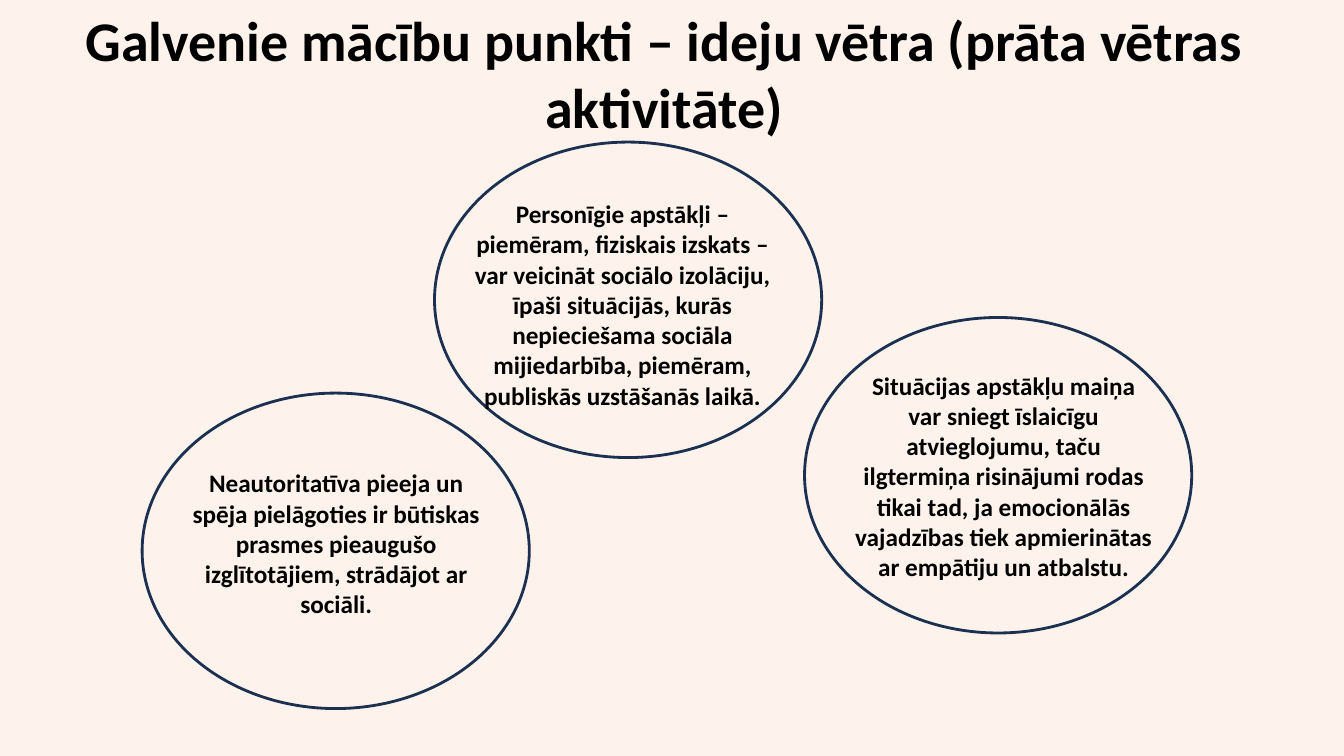
from dataclasses import dataclass

from pptx import Presentation
from pptx.dml.color import RGBColor
from pptx.enum.shapes import MSO_SHAPE
from pptx.enum.text import MSO_ANCHOR, MSO_AUTO_SIZE, PP_ALIGN
from pptx.util import Inches, Pt


@dataclass(frozen=True)
class Theme:
    font: str = "Calibri"
    background: RGBColor = RGBColor(0xFD, 0xF3, 0xEC)
    outline: RGBColor = RGBColor(0x1C, 0x30, 0x52)
    text: RGBColor = RGBColor(0, 0, 0)
    title_size: Pt = Pt(40)
    idea_size: Pt = Pt(18)
    outline_width: Pt = Pt(2)


THEME = Theme()
BUBBLE_WIDTH, BUBBLE_HEIGHT = 3.84, 3.13
TEXT_WIDTH = 3.17

TITLE = "Galvenie mācību punkti – ideju vētra (prāta vētras aktivitāte)"

# Bubble left and top, text offset within the bubble, text height, text
IDEAS = [
    (4.31, 1.41, 0.28, 0.51, 2.22,
     "Personīgie apstākļi – piemēram, fiziskais izskats – var veicināt "
     "sociālo izolāciju, īpaši situācijās, kurās nepieciešama sociāla "
     "mijiedarbība, piemēram, publiskās uzstāšanās laikā."),
    (1.41, 3.9, 0.34, 0.69, 1.62,
     "Neautoritatīva pieeja un spēja pielāgoties ir būtiskas prasmes "
     "pieaugušo izglītotājiem, strādājot ar sociāli."),
    (7.98, 3.15, 0.39, 0.47, 2.22,
     "Situācijas apstākļu maiņa var sniegt īslaicīgu atvieglojumu, taču "
     "ilgtermiņa risinājumi rodas tikai tad, ja emocionālās vajadzības "
     "tiek apmierinātas ar empātiju un atbalstu."),
]


def write_text(shape, text, size):
    frame = shape.text_frame
    frame.text = text
    frame.word_wrap = True
    frame.auto_size = MSO_AUTO_SIZE.NONE
    frame.vertical_anchor = MSO_ANCHOR.TOP
    para = frame.paragraphs[0]
    para.alignment = PP_ALIGN.CENTER
    para.font.name = THEME.font
    para.font.size = size
    para.font.bold = True
    para.font.color.rgb = THEME.text


def add_title(page, left, top, width, height):
    title = page.shapes.title
    title.left, title.top = Inches(left), Inches(top)
    title.width, title.height = Inches(width), Inches(height)
    write_text(title, TITLE, THEME.title_size)


def add_idea(page, left, top, text_left, text_top, text_height, text):
    """Draw an outlined bubble with its text box placed relative to it."""
    bubble = page.shapes.add_shape(
        MSO_SHAPE.OVAL, Inches(left), Inches(top),
        Inches(BUBBLE_WIDTH), Inches(BUBBLE_HEIGHT))
    bubble.shadow.inherit = False
    bubble.fill.background()
    bubble.line.color.rgb = THEME.outline
    bubble.line.width = THEME.outline_width
    box = page.shapes.add_textbox(
        Inches(left + text_left), Inches(top + text_top),
        Inches(TEXT_WIDTH), Inches(text_height))
    write_text(box, text, THEME.idea_size)


def build_brainstorm_page(deck):
    page = deck.slides.add_slide(deck.slide_layouts.get_by_name("Title Only"))
    page.background.fill.solid()
    page.background.fill.fore_color.rgb = THEME.background
    add_title(page, 0, 0, 13.17, 1.45)
    for idea in IDEAS:
        add_idea(page, *idea)


def main():
    deck = Presentation()
    deck.slide_width, deck.slide_height = Inches(13.33), Inches(7.5)
    build_brainstorm_page(deck)
    deck.save("out.pptx")


if __name__ == "__main__":
    main()
